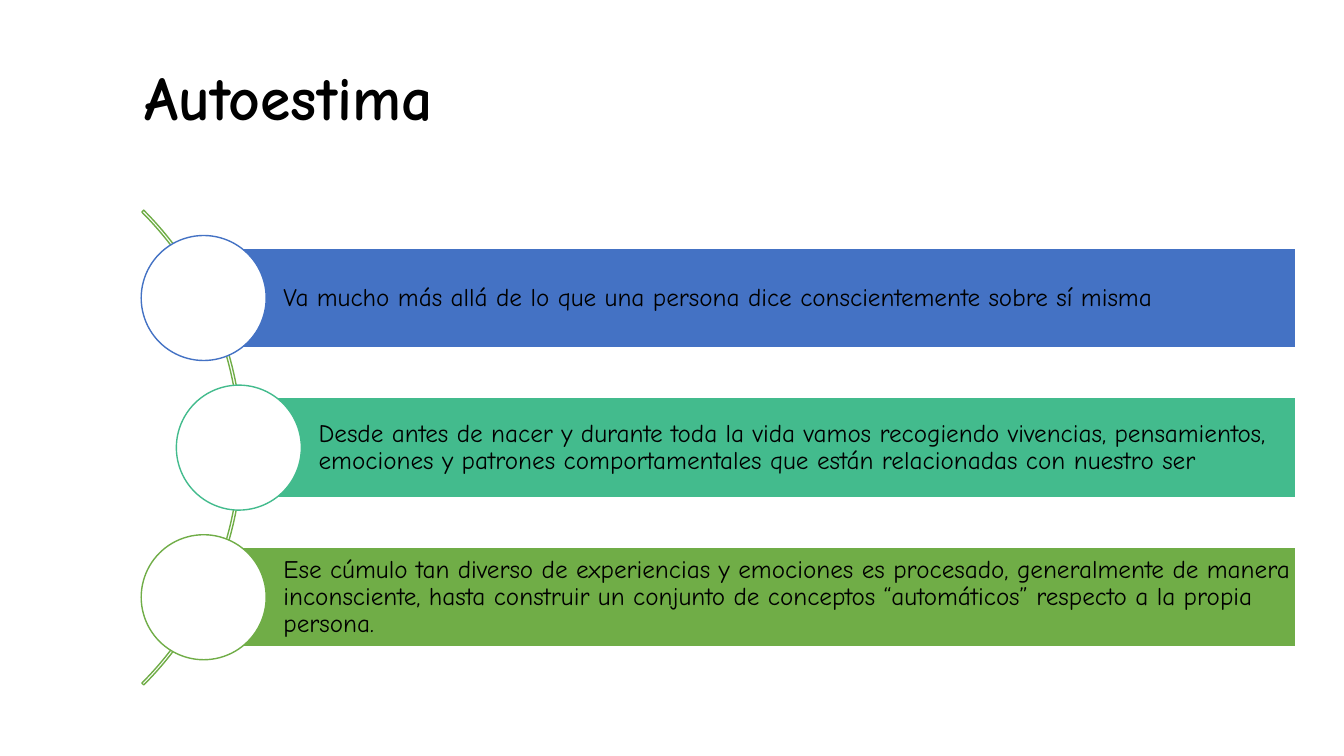
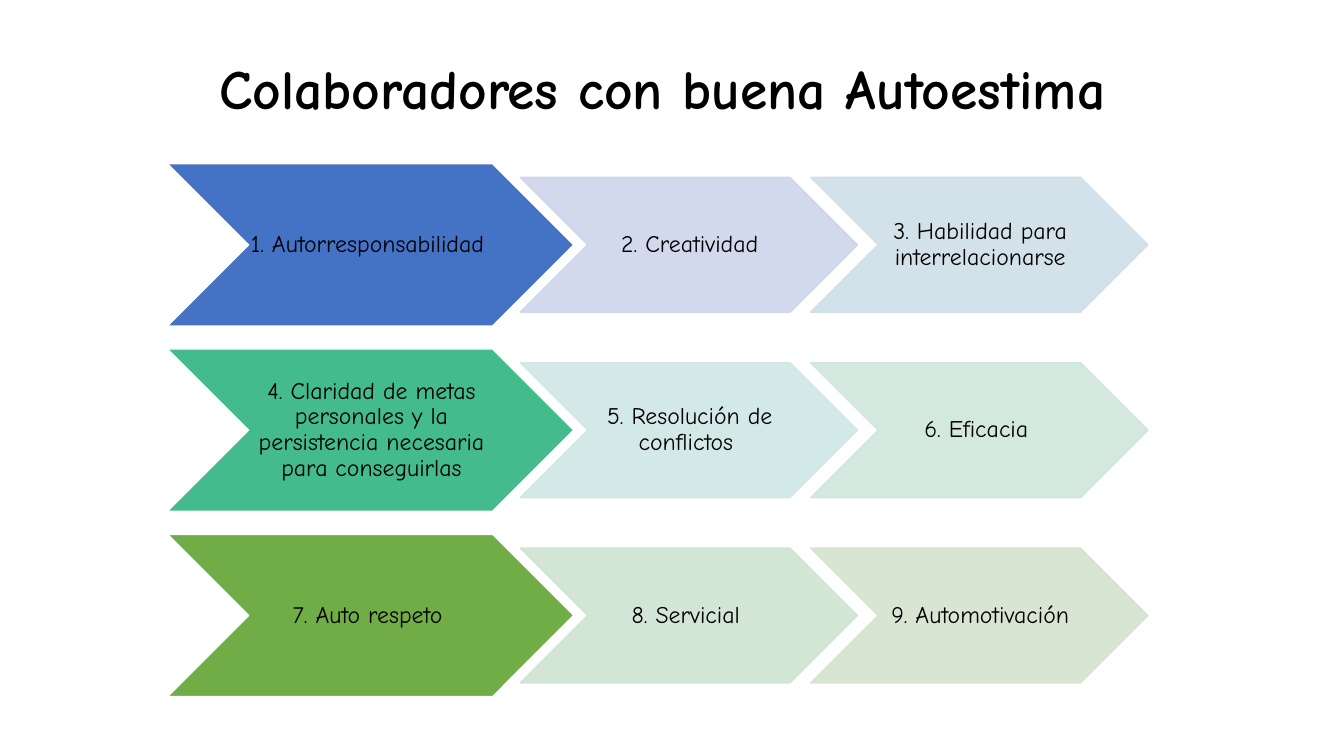
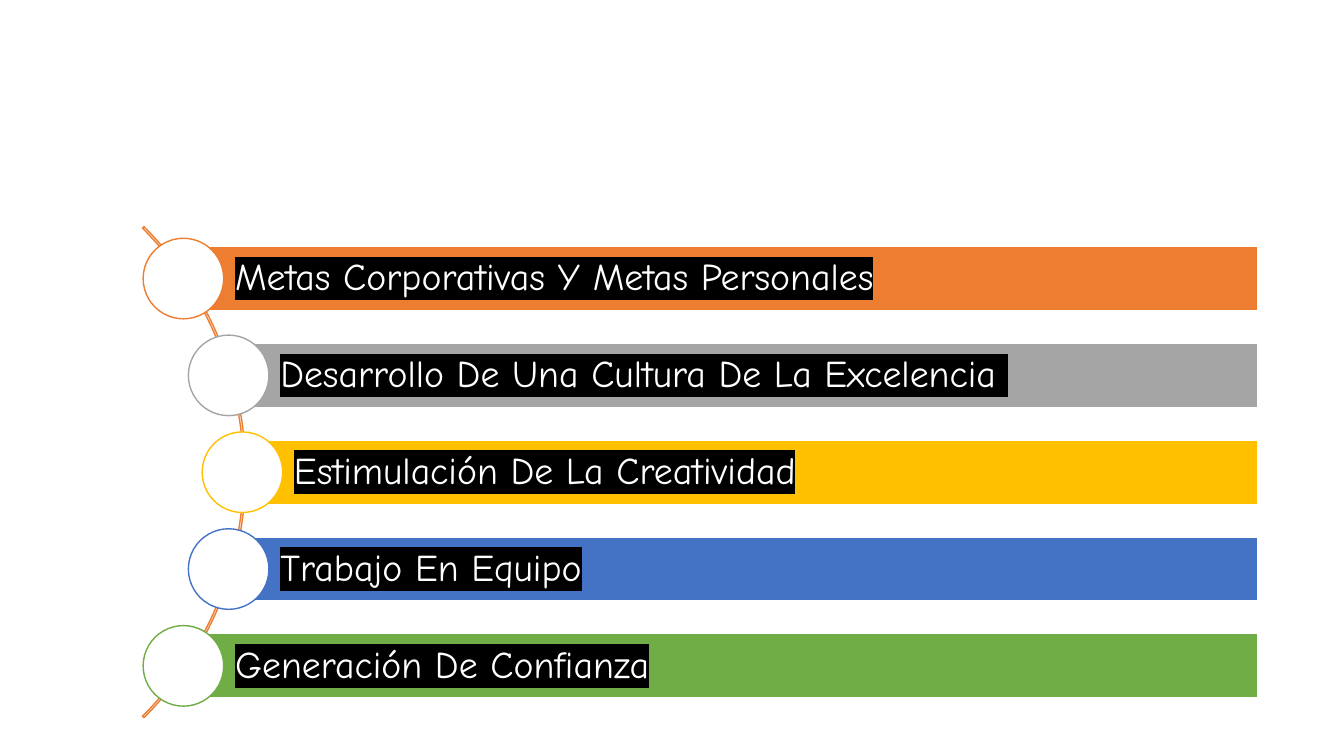
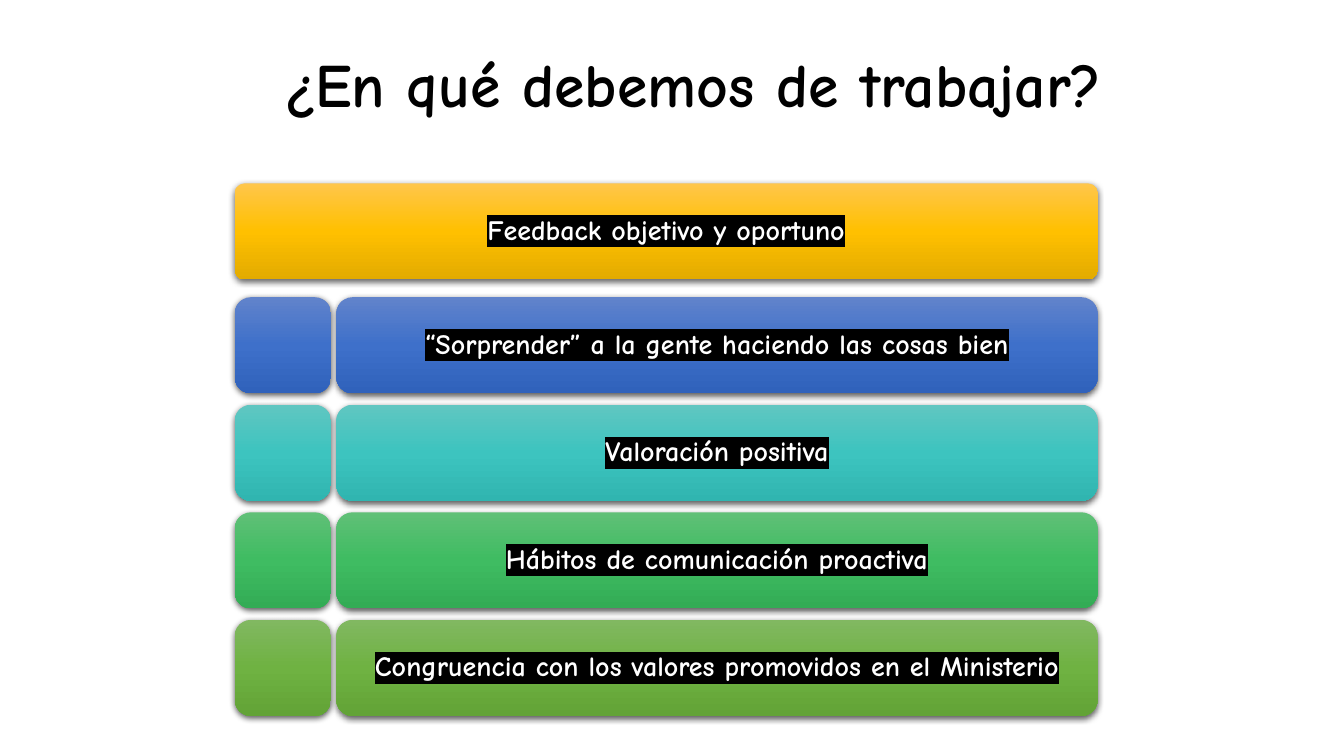
from math import sqrt

from lxml.etree import SubElement
from pptx import Presentation
from pptx.dml.color import RGBColor
from pptx.enum.shapes import MSO_SHAPE as Preset
from pptx.enum.text import MSO_ANCHOR as Anchor, MSO_AUTO_SIZE as AutoSize, PP_ALIGN as Align
from pptx.oxml.ns import qn
from pptx.util import Cm, Pt

# Shared style
FONT = "Comic Neue"
BLACK, WHITE = "000000", "FFFFFF"
BLUE, MINT, GREEN = "4472C4", "43BB8D", "70AD47"
ORANGE, GREY, YELLOW = "ED7D31", "A5A5A5", "FFC000"
TITLE_ONLY, BLANK = 5, 6


def rgb(color):
    return RGBColor.from_string(color)


# Text
def add_highlight(span, color):
    properties = span._r.rPr
    highlight = SubElement(properties, qn("a:highlight"))
    SubElement(highlight, qn("a:srgbClr"), val=color)
    properties.find(qn("a:solidFill")).addnext(highlight)


def write(shape, text, size, align=Align.LEFT, bold=False, highlighted=False, insets=None):
    frame = shape.text_frame
    frame.text = text
    frame.word_wrap = True
    frame.auto_size = AutoSize.NONE
    frame.vertical_anchor = Anchor.MIDDLE
    if insets:
        (frame.margin_left, frame.margin_top,
         frame.margin_right, frame.margin_bottom) = map(Cm, insets)
    para = frame.paragraphs[0]
    para.alignment = align
    para.line_spacing = 0.9
    span = para.runs[0]
    span.font.size = Pt(size)
    span.font.bold = bold
    span.font.name = FONT
    span.font.color.rgb = rgb(WHITE if highlighted else BLACK)
    if highlighted:
        add_highlight(span, BLACK)


def add_title(slide, text, left, top, height, size=44, align=Align.CENTER):
    title = slide.shapes.title
    title.left, title.top = Cm(left), Cm(top)
    title.width, title.height = Cm(26.37), Cm(height)
    write(title, text, size, align, bold=True)


# Shapes
def add_shape(slide, preset, left, top, width, height, fill=None, line=None):
    shape = slide.shapes.add_shape(preset, Cm(left), Cm(top), Cm(width), Cm(height))
    shape.shadow.inherit = False
    if fill:
        shape.fill.solid()
        shape.fill.fore_color.rgb = rgb(fill)
    else:
        shape.fill.background()
    if line:
        shape.line.color.rgb = rgb(line)
        shape.line.width = Pt(1)
    else:
        shape.line.fill.background()
    return shape


def set_opacity(shape, percent):
    for color in list(shape.element.spPr.iter(qn("a:srgbClr"))):
        SubElement(color, qn("a:alpha"), val=str(percent * 1000))


def set_gradient(shape, colors):
    shape.fill.gradient()
    shape.fill.gradient_angle = 270
    stops = shape.element.spPr.find(".//" + qn("a:gsLst"))
    for stop in list(stops):
        stops.remove(stop)
    for position, color in zip((0, 50000, 100000), colors):
        stop = SubElement(stops, qn("a:gs"), pos=str(position))
        SubElement(stop, qn("a:srgbClr"), val=color)


def set_shadow(shape):
    effects = shape.element.spPr.find(qn("a:effectLst"))
    shadow = SubElement(effects, qn("a:outerShdw"), blurRad=str(Pt(4.5)), dist=str(Pt(1.5)),
                        dir="5400000", algn="ctr", rotWithShape="0")
    color = SubElement(shadow, qn("a:srgbClr"), val=BLACK)
    SubElement(color, qn("a:alpha"), val="63000")


def add_curved_list(slide, items, center, radius, thickness, arc_color, pitch,
                    bar_height, diameter, right, size, insets, highlighted=False):
    """Bars that start at circles spread evenly along an arc."""
    center_x, center_y = center
    arc = add_shape(slide, Preset.BLOCK_ARC, center_x - radius, center_y - radius,
                    2 * radius, 2 * radius, line=arc_color)
    for index, value in enumerate((189, 27, thickness)):
        arc.adjustments[index] = value
    for index, (text, color) in enumerate(items):
        offset = (index - (len(items) - 1) / 2) * pitch
        x = center_x + sqrt(radius ** 2 - offset ** 2) - 0.08
        y = center_y + offset
        bar = add_shape(slide, Preset.RECTANGLE, x, y - bar_height / 2,
                        right - x, bar_height, color, WHITE)
        write(bar, text, size, highlighted=highlighted, insets=insets)
        add_shape(slide, Preset.OVAL, x - diameter / 2, y - diameter / 2,
                  diameter, diameter, WHITE, color)


def add_chevron(slide, text, left, middle, width, height, fill, line):
    chevron = add_shape(slide, Preset.CHEVRON, left, middle - height / 2,
                        width, height, fill, line)
    write(chevron, text, 17, Align.CENTER, insets=(0.05, 0.03, 0, 0.03))
    return chevron


def add_glossy_box(slide, left, top, width, colors, text=None, corner=0.167):
    box = add_shape(slide, Preset.ROUNDED_RECTANGLE, left, top, width, 2.42)
    box.adjustments[0] = corner
    set_gradient(box, colors)
    set_shadow(box)
    if text:
        write(box, text, 20, Align.CENTER, bold=True, highlighted=True,
              insets=(0.41, 0.41, 0.41, 0.41))


# Slides
def build_self_esteem(slide):
    add_title(slide, "Autoestima", 3.38, 0.33, 4.39, align=Align.LEFT)
    items = [
        ("Va mucho más allá de lo que una persona dice conscientemente sobre sí misma", BLUE),
        ("Desde antes de nacer y durante toda la vida vamos recogiendo vivencias, pensamientos, "
         "emociones y patrones comportamentales que están relacionadas con nuestro ser", MINT),
        ("Ese cúmulo tan diverso de experiencias y emociones es procesado, generalmente de "
         "manera inconsciente, hasta construir un conjunto de conceptos “automáticos” "
         "respecto a la propia persona.", GREEN),
    ]
    add_curved_list(slide, items, (-2.36, 11.28), 8.46, 0.004, GREEN, pitch=3.77,
                    bar_height=2.51, diameter=3.15, right=32.66, size=18,
                    insets=(2.01, 0.13, 0.08, 0.13))


def build_collaborators(slide):
    add_title(slide, "Colaboradores con buena Autoestima ", 3.76, 0.5, 3.61, size=39.6)
    rows = [
        (("1. Autorresponsabilidad ", BLUE),
         ("2. Creatividad", "CFD5EA"),
         ("3. Habilidad para interrelacionarse", "CFDFE8")),
        (("4. Claridad de metas personales y la persistencia necesaria para conseguirlas", MINT),
         ("5. Resolución de conflictos ", "CFE7E6"),
         ("6. Eficacia ", "CFE6DB")),
        (("7. Auto respeto ", GREEN),
         ("8. Servicial ", "CFE4D2"),
         ("9. Automotivación", "D5E3CF")),
    ]
    for row, ((lead, lead_color), *others) in enumerate(rows):
        middle = 6.17 + row * 4.67
        add_chevron(slide, lead, 4.22, middle, 10.24, 4.09, lead_color, WHITE)
        for column, (text, color) in enumerate(others):
            chevron = add_chevron(slide, text, 13.11 + column * 7.32, middle,
                                  8.5, 3.4, color, color)
            set_opacity(chevron, 90)


def build_goals(slide):
    items = [
        ("Metas Corporativas Y Metas Personales", ORANGE),
        ("Desarrollo De Una Cultura De La Excelencia ", GREY),
        ("Estimulación De La Creatividad", YELLOW),
        ("Trabajo En Equipo", BLUE),
        ("Generación De Confianza", GREEN),
    ]
    add_curved_list(slide, items, (-2.56, 11.9), 8.75, 0.003, ORANGE, pitch=2.44,
                    bar_height=1.62, diameter=2.03, right=31.7, size=27,
                    insets=(1.3, 0.18, 0.18, 0.18), highlighted=True)


def build_actions(slide):
    add_title(slide, "¿En qué debemos de trabajar?", 4.29, 0, 4.39)
    left, wide_left, right = 5.92, 8.48, 27.66
    add_glossy_box(slide, left, 4.62, right - left, ("FFC64B", "FFC000", "E3AB00"),
                   "Feedback objetivo y oportuno", corner=0.1)
    rows = [
        ("“Sorprender” a la gente haciendo las cosas bien", ("6183CB", "3E70CA", "3062BB")),
        ("Valoración positiva", ("60C6C1", "3DC4BF", "30B5B0")),
        ("Hábitos de comunicación proactiva", ("60C077", "3FBC62", "33AC55")),
        ("Congruencia con los valores promovidos en el Ministerio",
         ("81B861", "6FB242", "62A336")),
    ]
    for row, (text, colors) in enumerate(rows):
        top = 7.49 + row * 2.71
        add_glossy_box(slide, left, top, 2.42, colors)
        add_glossy_box(slide, wide_left, top, right - wide_left, colors, text)


def main():
    deck = Presentation()
    deck.slide_width, deck.slide_height = Cm(33.87), Cm(19.05)
    for layout, build in ((TITLE_ONLY, build_self_esteem), (TITLE_ONLY, build_collaborators),
                          (BLANK, build_goals), (TITLE_ONLY, build_actions)):
        build(deck.slides.add_slide(deck.slide_layouts[layout]))
    deck.save("out.pptx")


if __name__ == "__main__":
    main()
